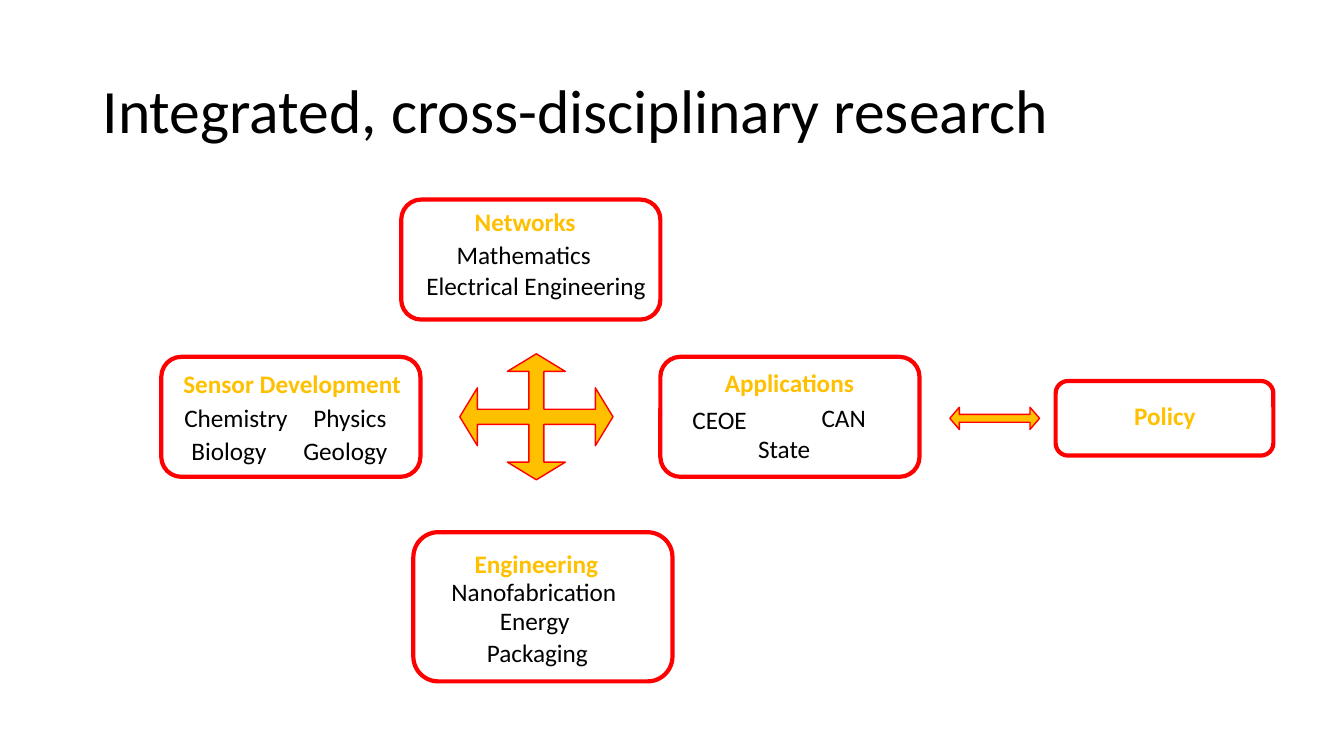
from pptx import Presentation
from pptx.dml.color import RGBColor
from pptx.enum.shapes import MSO_SHAPE
from pptx.enum.text import MSO_ANCHOR, MSO_AUTO_SIZE
from pptx.util import Pt

PX = 9144  # EMU per px, 100 px to the inch
COLORS = {"text": "000000", "accent": "FFC000", "outline": "FF0000"}
BOX_W, BOX_H, LABEL_H = 257, 119, 40

# Each group: box (left, top, width, height), heading and topics (text, left, top, width)
GROUPS = [
    ((398, 198, BOX_W, BOX_H), ("Networks", 461, 200, 121), [
        ("Mathematics", 443, 233, 155),
        ("Electrical Engineering", 413, 263, 240)]),
    ((160, 354, BOX_W, BOX_H), ("Sensor Development", 172, 361, 238), [
        ("Chemistry", 173, 394, 124), ("Physics", 301, 394, 93),
        ("Biology", 180, 427, 95), ("Geology", 291, 427, 105)]),
    ((655, 354, BOX_W, BOX_H), ("Applications", 709, 359, 149), [
        ("CEOE", 677, 396, 74), ("CAN", 805, 394, 65),
        ("State", 742, 425, 72)]),
    ((410, 528, BOX_W, 148), ("Engineering", 461, 539, 143), [
        ("Nanofabrication", 438, 567, 186),
        ("Energy", 486, 596, 90),
        ("Packaging", 473, 627, 121)]),
    ((1047, 378, 216, 74), ("Policy", 1115, 392, 81), []),
]


class SlideBuilder:
    font = "Calibri"

    def __init__(self, slide):
        self.shapes = slide.shapes

    def color(self, name):
        return RGBColor.from_string(COLORS[name])

    def shape(self, kind, box, line_pt, fill=None, adjustments=()):
        s = self.shapes.add_shape(kind, *(v * PX for v in box))
        s.shadow.inherit = False
        for i, value in enumerate(adjustments):
            s.adjustments[i] = value
        if fill:
            s.fill.solid()
            s.fill.fore_color.rgb = self.color(fill)
        else:
            s.fill.background()
        s.line.color.rgb = self.color("outline")
        s.line.width = Pt(line_pt)

    def text(self, text, box, size, color="text", bold=False):
        tf = self.shapes.add_textbox(*(v * PX for v in box)).text_frame
        p = tf.paragraphs[0]
        r = p.add_run()
        r.text = text
        r.font.name = self.font
        r.font.size = Pt(size)
        r.font.bold = bold
        r.font.color.rgb = self.color(color)
        return tf

    def title(self, text, box):
        tf = self.text(text, box, 44)
        tf.word_wrap = True
        tf.vertical_anchor = MSO_ANCHOR.MIDDLE
        tf.paragraphs[0].line_spacing = 0.9

    def label(self, text, left, top, width, **style):
        tf = self.text(text, (left, top, width, LABEL_H), 18, **style)
        tf.word_wrap = False
        tf.auto_size = MSO_AUTO_SIZE.SHAPE_TO_FIT_TEXT

    def group(self, box, heading, topics):
        """Draw a rounded box with its bold heading and its topics."""
        self.shape(MSO_SHAPE.ROUNDED_RECTANGLE, box, 3)
        self.label(*heading, color="accent", bold=True)
        for topic in topics:
            self.label(*topic)

    def arrow(self, kind, box, adjustments):
        self.shape(kind, box, 1, "accent", adjustments)


def main():
    prs = Presentation()
    prs.slide_width, prs.slide_height = 1333 * PX, 750 * PX
    sb = SlideBuilder(prs.slides.add_slide(prs.slide_layouts[6]))
    sb.title("Integrated, cross-disciplinary research", (92, 40, 1150, 145))
    for group in GROUPS:
        sb.group(*group)
    sb.arrow(MSO_SHAPE.QUAD_ARROW, (456, 351, 152, 125), (0.12, 0.23, 0.14))
    sb.arrow(MSO_SHAPE.LEFT_RIGHT_ARROW, (942, 404, 89, 22), (0.35, 0.43))
    prs.save("out.pptx")


if __name__ == "__main__":
    main()
